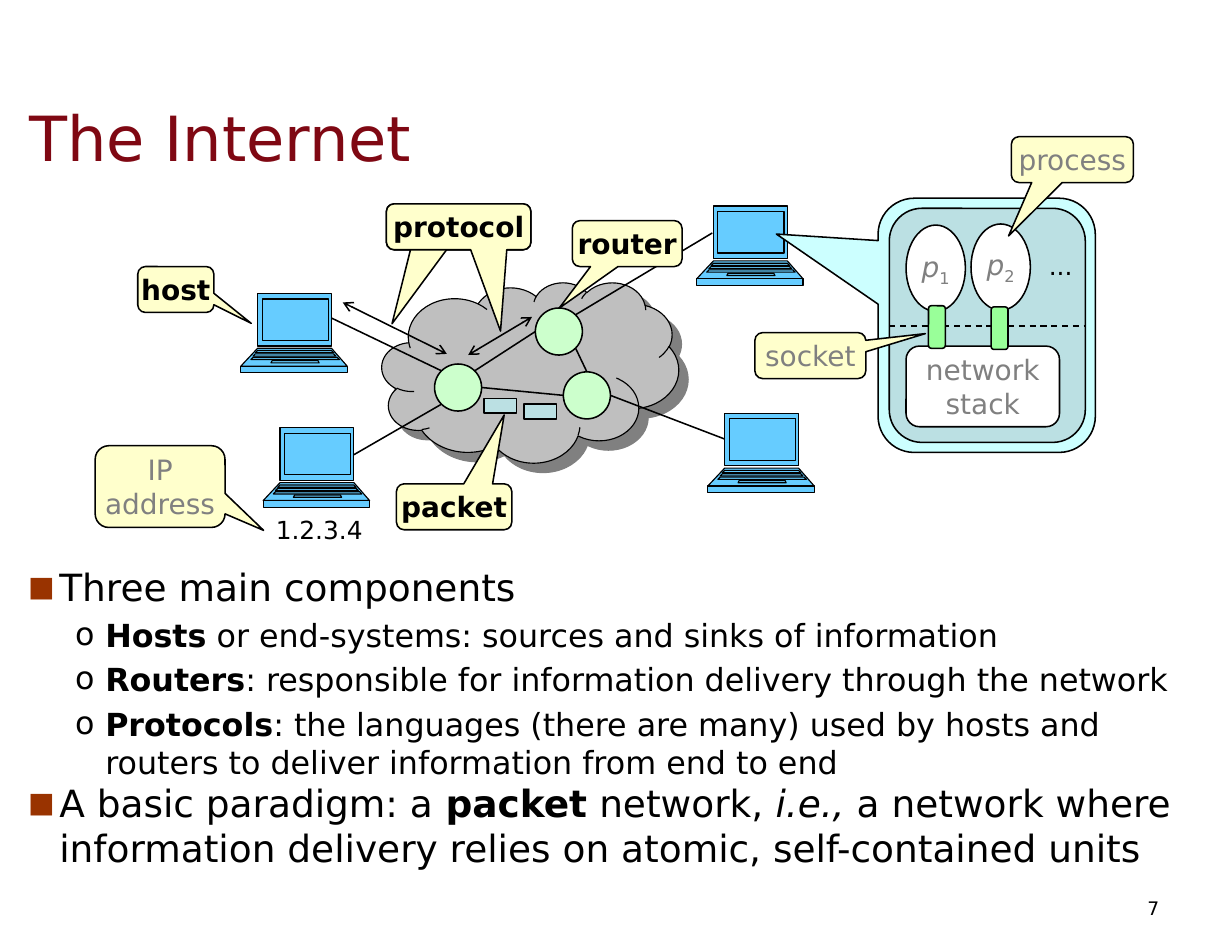
from lxml import etree
from pptx import Presentation
from pptx.dml.color import RGBColor
from pptx.enum.dml import MSO_LINE
from pptx.enum.shapes import MSO_CONNECTOR, MSO_SHAPE
from pptx.enum.text import MSO_ANCHOR, MSO_AUTO_SIZE, PP_ALIGN
from pptx.oxml.ns import qn
from pptx.util import Inches, Pt

CALLOUT, CLOUD = MSO_SHAPE.ROUNDED_RECTANGULAR_CALLOUT, MSO_SHAPE.CLOUD
OVAL, RECT, ROUND = MSO_SHAPE.OVAL, MSO_SHAPE.RECTANGLE, MSO_SHAPE.ROUNDED_RECTANGLE
STRAIGHT, DASH = MSO_CONNECTOR.STRAIGHT, MSO_LINE.DASH
MIDDLE, TOP, NO_FIT = MSO_ANCHOR.MIDDLE, MSO_ANCHOR.TOP, MSO_AUTO_SIZE.NONE
LEFT, CENTER, RIGHT = PP_ALIGN.LEFT, PP_ALIGN.CENTER, PP_ALIGN.RIGHT
FONT = "DejaVu Sans"
COLORS = {
    "title": "7F0813", "black": "000000", "gray": "808080", "white": "FFFFFF",
    "bullet": "993300", "laptop": "66CCFF", "cloud": "BFBFBF", "router": "CCFFCC",
    "teal": "BBE0E3", "panel": "CCFFFF", "socket": "99FF99", "label": "FFFFCC",
}
LAPTOP_PARTS = [
    (0.15, 0.81, 0, 0.15, 0.81, 0.47),
    (0.15, 0.81, 0.49, 0, 0.95, 0.65),
    (0, 0.95, 0.65, 0, 0.95, 0.71),
    (0.19, 0.78, 0.05, 0.19, 0.78, 0.42),
    (0.15, 0.81, 0.51, 0.13, 0.83, 0.53),
    (0.28, 0.69, 0.6, 0.27, 0.7, 0.62),
    (0.13, 0.83, 0.54, 0.11, 0.85, 0.56),
    (0.11, 0.86, 0.57, 0.09, 0.88, 0.59),
]


def rgb(name):
    """Return the named colour."""
    return RGBColor.from_string(COLORS[name])


def add_run(p, text, size=18, color="black", bold=False, italic=False, baseline=0):
    """Add one formatted run to a paragraph."""
    r = p.add_run()
    r.text = text
    r.font.name, r.font.size = FONT, Pt(size)
    r.font.bold, r.font.italic = bold, italic
    r.font.color.rgb = rgb(color)
    if baseline:
        r.font._element.set("baseline", str(baseline * 1000))


def set_frame(tf, anchor=MIDDLE, margins=(0, 0), wrap=False):
    """Set anchor, margins and wrapping of a text frame."""
    tf.auto_size, tf.word_wrap, tf.vertical_anchor = NO_FIT, wrap, anchor
    tf.margin_left = tf.margin_right = Inches(margins[0])
    tf.margin_top = tf.margin_bottom = Inches(margins[1])


def write(sp, text, align=CENTER, wrap=False, margins=(0, 0), **fmt):
    """Write text into a shape, breaking lines at newlines."""
    set_frame(sp.text_frame, margins=margins, wrap=wrap)
    p = sp.text_frame.paragraphs[0]
    p.alignment = align
    for i, line in enumerate(text.split("\n")):
        if i:
            p.add_line_break()
        add_run(p, line, **fmt)


def style(sp, fill, width=1):
    """Give a shape a flat fill and a black outline."""
    sp.shadow.inherit = False
    sp.fill.solid()
    sp.fill.fore_color.rgb = rgb(fill)
    sp.line.color.rgb = rgb("black")
    sp.line.width = Pt(width)


def add_shape(s, kind, box, fill, width=1):
    """Add a preset shape in a box given in inches."""
    sp = s.shapes.add_shape(kind, *map(Inches, box))
    style(sp, fill, width)
    return sp


def add_text(s, box, text, **fmt):
    """Add a text box."""
    write(s.shapes.add_textbox(*map(Inches, box)), text, **fmt)


def add_line(s, x1, y1, x2, y2, dashed=False, arrows=False):
    """Add a straight line, optionally dashed or with arrowheads."""
    c = s.shapes.add_connector(STRAIGHT, *map(Inches, (x1, y1, x2, y2)))
    c.line.color.rgb = rgb("black")
    c.line.width = Pt(1)
    if dashed:
        c.line.dash_style = DASH
    if arrows:
        for end in ("a:headEnd", "a:tailEnd"):
            etree.SubElement(c.line._get_or_add_ln(), qn(end), type="arrow")
    etree.SubElement(c._element.spPr, qn("a:effectLst"))


def add_callout(s, box, tip, fill="label", text="", **fmt):
    """Add a callout whose tip is offset by fractions of its size."""
    sp = add_shape(s, CALLOUT, box, fill)
    sp.adjustments[0], sp.adjustments[1] = tip
    if text:
        write(sp, text, **fmt)


def add_laptop(s, x, y):
    """Draw a laptop with its top left corner at x, y."""
    group = s.shapes.add_group_shape()
    for l1, r1, y1, l2, r2, y2 in LAPTOP_PARTS:
        corners = [(Inches(x + dx), Inches(y + dy))
                   for dx, dy in ((l1, y1), (r1, y1), (r2, y2), (l2, y2))]
        builder = group.shapes.build_freeform(*corners[0])
        builder.add_line_segments(corners[1:], close=True)
        style(builder.convert_to_shape(), "laptop", 0.75)


def add_network(s, x, y):
    """Draw the cloud with routers, hosts, links and packets."""
    cloud = add_shape(s, CLOUD, (x + 1.26, y + 0.68, 2.65, 1.61), "cloud", 0.75)
    effects = cloud._element.spPr.find(qn("a:effectLst"))
    shadow = etree.SubElement(effects, qn("a:outerShdw"), dist=str(Pt(8.5)),
                              dir="2700000", algn="ctr", rotWithShape="0")
    etree.SubElement(shadow, qn("a:srgbClr"), val=COLORS["gray"])
    for dx, dy in ((1.73, 1.41), (2.88, 1.48), (2.63, 0.91)):
        add_shape(s, OVAL, (x + dx, y + dy, 0.42, 0.42), "router")
    for dx, dy in ((0, 0.78), (4.07, 0), (0.2, 1.98), (4.17, 1.85)):
        add_laptop(s, x + dx, y + dy)
    links = [(0.81, 1, 1.79, 1.47), (1.01, 2.22, 1.79, 1.77), (2.09, 1.47, 2.63, 1.12),
             (2.99, 1.27, 3.09, 1.48), (2.15, 1.62, 2.88, 1.69), (3.3, 1.69, 4.32, 2.08),
             (2.99, 0.97, 4.21, 0.24)]
    exchanges = [(2.03, 1.33, 2.6, 0.99), (0.91, 0.86, 1.84, 1.32)]
    for x1, y1, x2, y2 in links + exchanges:
        add_line(s, x + x1, y + y1, x + x2, y + y2, arrows=(x1, y1, x2, y2) in exchanges)
    add_text(s, (x + 0.29, y + 2.75, 0.82, 0.27), "1.2.3.4", size=16)
    for dx, dy in ((2.17, 1.72), (2.53, 1.77)):
        add_shape(s, RECT, (x + dx, y + dy, 0.29, 0.13), "teal")


def add_host_panel(s, x, y):
    """Draw the inside of a host: processes, sockets and network stack."""
    add_callout(s, (x, y, 1.94, 2.27), (-0.968, -0.359), "panel")
    add_shape(s, ROUND, (x + 0.1, y + 0.09, 1.75, 2.09), "teal")
    for dx, dy, number in ((0.25, 0.24, "1"), (0.83, 0.23, "2")):
        sp = add_shape(s, OVAL, (x + dx, y + dy, 0.53, 0.77), "white")
        write(sp, "p", color="gray", italic=True)
        add_run(sp.text_frame.paragraphs[0], number, color="gray", baseline=-25)
    add_text(s, (x + 1.51, y + 0.47, 0.24, 0.27), "...", size=16)
    add_line(s, x + 0.1, y + 1.14, x + 1.86, y + 1.14, dashed=True)
    stack = add_shape(s, ROUND, (x + 0.25, y + 1.32, 1.37, 0.72), "white")
    write(stack, "network stack", wrap=True, color="gray")
    for dx, dy in ((1.01, 0.97), (0.45, 0.96)):
        add_shape(s, ROUND, (x + dx, y + dy, 0.15, 0.38), "socket")


def add_labels(s):
    """Add the callouts that name the parts of the diagram."""
    key, minor = {"bold": True}, {"color": "gray"}
    protocol = (3.45, 1.82, 1.29, 0.41)
    for box, tip, text, fmt in (
        ((1.23, 2.38, 0.68, 0.41), (0.99, 0.738), "host", key),
        ((0.85, 3.98, 1.16, 0.73), (0.797, 0.536), "IP\naddress", minor),
        ((9.03, 1.22, 1.09, 0.41), (-0.523, 1.663), "process", minor),
        ((3.54, 4.32, 1.03, 0.41), (0.434, -2.001), "packet", key),
        ((5.11, 1.97, 0.98, 0.41), (-0.621, 1.41), "router", key),
        ((6.74, 2.97, 0.99, 0.41), (1.037, -0.478), "socket", minor),
        (protocol, (-0.461, 2.112), "", {}),
        (protocol, (0.29, 2.272), "protocol", key),
    ):
        add_callout(s, box, tip, text=text, **fmt)


def place(sp, box):
    """Move a placeholder to a box given in inches."""
    sp.left, sp.top, sp.width, sp.height = map(Inches, box)


def add_bullet(p, level, runs):
    """Format one list paragraph and add its runs."""
    p.level, p.alignment = level, LEFT
    p.space_before = Pt(4 if level else 0)
    pPr = p._p.get_or_add_pPr()
    margin, indent = ((0.42, -0.28), (0.83, -0.27))[level]
    pPr.set("marL", str(Inches(margin)))
    pPr.set("indent", str(Inches(indent)))
    if level == 0:
        color = etree.SubElement(pPr, qn("a:buClr"))
        etree.SubElement(color, qn("a:srgbClr"), val=COLORS["bullet"])
        etree.SubElement(pPr, qn("a:buSzPct"), val="75000")
    etree.SubElement(pPr, qn("a:buFont"), typeface=FONT)
    etree.SubElement(pPr, qn("a:buChar"), char="o" if level else "■")
    for text, fmt in runs:
        add_run(p, text, size=20.4 if level else 24.1, **fmt)


def add_body(sp, box):
    """Fill the body placeholder with the list."""
    place(sp, box)
    tf = sp.text_frame
    set_frame(tf, TOP, (0.11, 0.06), True)
    bold, plain = {"bold": True}, {}
    items = [
        (0, [("Three main components", plain)]),
        (1, [("Hosts", bold), (" or end-systems: sources and sinks of information", plain)]),
        (1, [("Routers", bold),
             (": responsible for information delivery through the network", plain)]),
        (1, [("Protocols", bold), (": the languages (there are many) used by hosts and "
                                   "routers to deliver information from end to end", plain)]),
        (0, [("A basic paradigm: a ", plain), ("packet", bold), (" network, ", plain),
             ("i.e.,", {"italic": True}), (" a network where information delivery "
                                           "relies on atomic, self-contained units", plain)]),
    ]
    for i, (level, runs) in enumerate(items):
        add_bullet(tf.add_paragraph() if i else tf.paragraphs[0], level, runs)


def main():
    """Build and save the slide."""
    prs = Presentation()
    prs.slide_width, prs.slide_height = Inches(11), Inches(8.5)
    s = prs.slides.add_slide(prs.slide_layouts[1])
    place(s.shapes.title, (0.15, 0.7, 10.53, 1.04))
    write(s.shapes.title, "The Internet", align=LEFT, wrap=True, margins=(0.11, 0.06),
          size=40, color="title")
    add_body(s.placeholders[1], (0, 4.98, 11, 3))
    add_text(s, (7.88, 7.88, 2.57, 0.45), "7", align=RIGHT, margins=(0.1, 0.05), size=12)
    add_network(s, 2.15, 1.84)
    add_host_panel(s, 7.84, 1.77)
    add_labels(s)
    prs.save("out.pptx")


if __name__ == "__main__":
    main()
